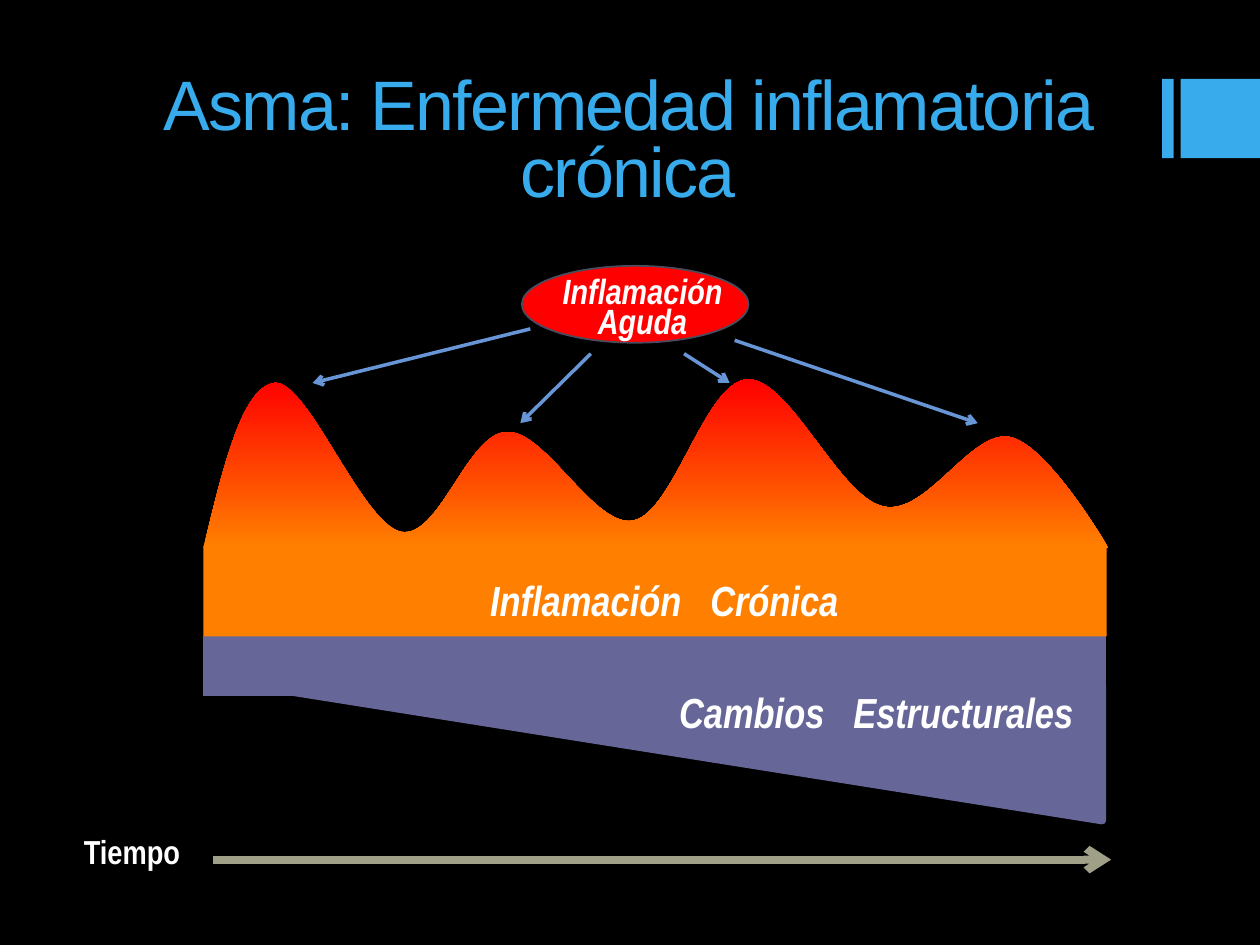
"""Build a slide on asthma as a chronic inflammatory disease."""
from lxml import etree
from pptx import Presentation
from pptx import util as u
from pptx.dml.color import RGBColor
from pptx.enum import shapes, text
from pptx.oxml.ns import qn

TITLE = "Asma: Enfermedad inflamatoria crónica"
ACCENT, PURPLE, ORANGE, RED = "38ABED", "666699", "FF8000", "FF0000"
ACCENT_BARS = [(23.43, 1.59, 0.23, 1.6), (23.8, 1.59, 1.6, 1.6)]
STRUCTURE_BAND = (4.17, 12.9, 18.05, 1.05)
STRUCTURE_WEDGE = [(4.27, 13.69), (22.22, 16.54), (22.22, 13.82)]
CHRONIC_BAND = (4.1, 11, 18.21, 1.83)
ACUTE_OVAL = (10.52, 5.36, 4.57, 1.55)
ACUTE_ARROWS = [
    ((10.69, 6.63), (6.3, 7.72)),
    ((11.91, 7.13), (10.49, 8.53)),
    ((13.79, 7.13), (14.71, 7.72)),
    ((14.81, 6.86), (19.71, 8.53)),
]
TIME_ARROW = ((4.3, 17.33), (22.4, 17.33))
WAVE_START = (4.1, 11.05)
WAVE_CURVES = [
    ((4.5, 9.42), (4.88, 7.8), (5.54, 7.72)),
    ((6.2, 7.67), (7.29, 10.54), (8.08, 10.72)),
    ((8.86, 10.87), (9.42, 8.74), (10.21, 8.71)),
    ((11, 8.66), (11.99, 10.67), (12.78, 10.49)),
    ((13.59, 10.31), (14.22, 7.7), (15.06, 7.65)),
    ((15.9, 7.59), (16.92, 10.03), (17.81, 10.21)),
    ((18.67, 10.41), (19.58, 8.66), (20.35, 8.81)),
    ((21.11, 8.94), (22.35, 11.05), (22.35, 11.05)),
]


def color(value):
    return RGBColor.from_string(value)


def paint(shape, fill, line=None, width=1):
    shape.shadow.inherit = False
    shape.fill.solid()
    shape.fill.fore_color.rgb = color(fill)
    if line:
        shape.line.color.rgb = color(line)
        shape.line.width = u.Pt(width)
    else:
        shape.line.fill.background()
    return shape


def add_block(slide, kind, box, fill, **outline):
    shape = slide.shapes.add_shape(kind, *map(u.Cm, box))
    return paint(shape, fill, **outline)


def add_outline(slide, points, close=True):
    corners = [(u.Cm(x), u.Cm(y)) for x, y in points]
    builder = slide.shapes.build_freeform(*corners[0])
    builder.add_line_segments(corners[1:], close=close)
    return builder.convert_to_shape()


def add_wave(slide, start, curves):
    wave = add_outline(slide, [start] + [curve[-1] for curve in curves], close=False)
    segments = list(wave._element.iter(qn("a:lnTo")))
    for segment, curve in zip(segments, curves):
        bezier = etree.Element(qn("a:cubicBezTo"))
        for x, y in curve:
            etree.SubElement(bezier, qn("a:pt"), x=str(u.Cm(x) - wave.left),
                             y=str(u.Cm(y) - wave.top))
        segment.getparent().replace(segment, bezier)
    return wave


def add_arrow(slide, start, end, line, width):
    ends = map(u.Cm, start + end)
    arrow = slide.shapes.add_connector(shapes.MSO_CONNECTOR.STRAIGHT, *ends)
    arrow.line.color.rgb = color(line)
    arrow.line.width = u.Pt(width)
    etree.SubElement(arrow.line._get_or_add_ln(), qn("a:tailEnd"), type="arrow")
    etree.SubElement(arrow._element.spPr, qn("a:effectLst"))


def write(shape, box, lines, size, name="Arial Narrow", fill="FFFFFF", bold=True,
          italic=True, align=text.PP_ALIGN.LEFT, spacing=1.0, wrap=False,
          inset=(0, 0), word_gap=0, tracking=0):
    shape.left, shape.top, shape.width, shape.height = map(u.Cm, box)
    frame = shape.text_frame
    frame.word_wrap = wrap
    frame.auto_size = text.MSO_AUTO_SIZE.NONE
    frame.vertical_anchor = text.MSO_ANCHOR.TOP
    frame.margin_left = frame.margin_right = u.Cm(inset[0])
    frame.margin_top = frame.margin_bottom = u.Cm(inset[1])
    frame.text = "\n".join(lines)
    for paragraph, line in zip(frame.paragraphs, lines):
        paragraph.alignment = align
        paragraph.line_spacing = spacing
        if word_gap:
            first, last = line.split()
            paragraph.runs[0].text = first
            for part in (" ", last):
                paragraph.add_run().text = part
        for run in paragraph.runs:
            font = run.font
            font.name, font.size, font.bold, font.italic = name, u.Pt(size), bold, italic
            font.color.rgb = color(fill)
            extra = word_gap if run.text == " " else tracking
            if extra:
                font._element.set("spc", str(extra * 100))


def add_text(slide, box, lines, size, **style):
    write(slide.shapes.add_textbox(*map(u.Cm, box)), box, lines, size, **style)


def main():
    presentation = Presentation()
    presentation.slide_width, presentation.slide_height = u.Cm(25.4), u.Cm(19.05)
    slide = presentation.slides.add_slide(presentation.slide_layouts[5])
    slide.background.fill.solid()
    slide.background.fill.fore_color.rgb = color("000000")
    kinds = shapes.MSO_SHAPE
    center = text.PP_ALIGN.CENTER

    write(slide.shapes.title, (1.38, 1.42, 22.56, 2.54), [TITLE], 40, name="Arial",
          fill=ACCENT, bold=False, italic=False, align=center, spacing=0.8,
          wrap=True, inset=(0.25, 0.13), tracking=-1)
    for bar in ACCENT_BARS:
        add_block(slide, kinds.RECTANGLE, bar, ACCENT)

    paint(add_outline(slide, STRUCTURE_WEDGE), PURPLE, line=PURPLE, width=4.5)
    band = add_block(slide, kinds.RECTANGLE, STRUCTURE_BAND, PURPLE, line=PURPLE, width=4.5)
    etree.SubElement(band.line._get_or_add_ln(), qn("a:miter"), lim="800000")
    add_text(slide, (13.69, 13.84, 8.03, 1.02), ["Cambios Estructurales"], 24, word_gap=11)

    add_text(slide, (1.69, 16.76, 1.96, 0.81), ["Tiempo"], 19, italic=False)
    add_arrow(slide, *TIME_ARROW, "A0A089", 4.5)

    for start, end in ACUTE_ARROWS:
        add_arrow(slide, start, end, "6895D5", 2)
    add_block(slide, kinds.OVAL, ACUTE_OVAL, RED, line="4A4C5E")
    add_text(slide, (11, 5.54, 3.91, 1.5), ["Inflamación", "Aguda"], 20,
             align=center, spacing=0.7, inset=(0.25, 0.13))

    add_block(slide, kinds.RECTANGLE, CHRONIC_BAND, ORANGE)
    wave = paint(add_wave(slide, WAVE_START, WAVE_CURVES), ORANGE)
    wave.fill.gradient()
    wave.fill.gradient_angle = 90
    for stop, value in zip(wave.fill.gradient_stops, (ORANGE, RED)):
        stop.color.rgb = color(value)
    add_text(slide, (9.88, 11.58, 7.26, 1.02), ["Inflamación Crónica"], 24, word_gap=11)

    presentation.save("out.pptx")


if __name__ == "__main__":
    main()
